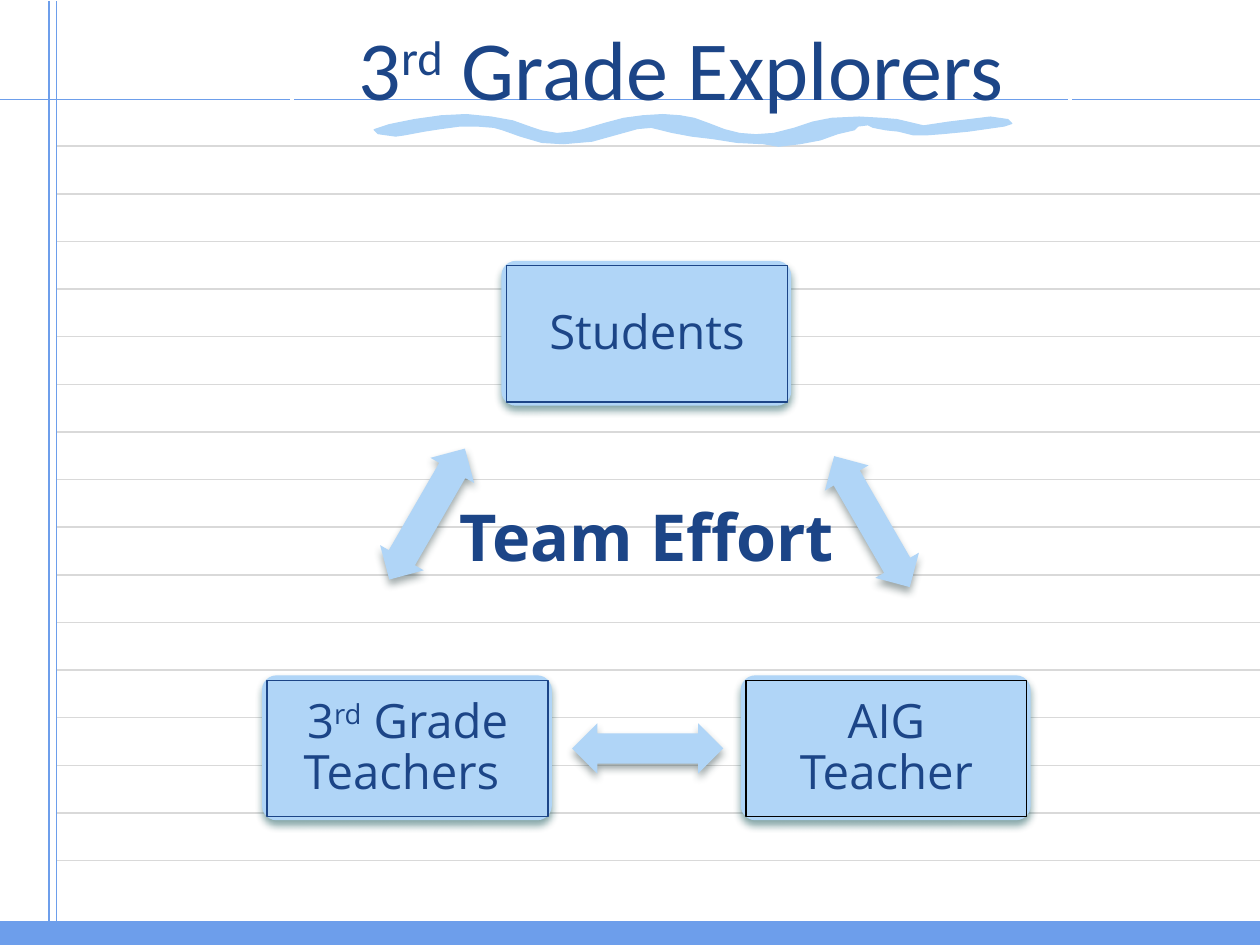
from lxml.etree import SubElement
from pptx import Presentation
from pptx.dml.color import RGBColor
from pptx.enum.shapes import MSO_CONNECTOR, MSO_SHAPE
from pptx.enum.text import MSO_ANCHOR, PP_ALIGN
from pptx.oxml.ns import qn
from pptx.util import Inches, Pt

NAVY, SKY, BLUE = "1C4587", "B0D5F7", "6D9EEB"


def paint(shape, fill=None, line=None, width=0.75, shadow=None):
    if fill:
        shape.fill.solid()
        shape.fill.fore_color.rgb = RGBColor.from_string(fill)
    else:
        shape.fill.background()
    if line:
        shape.line.color.rgb = RGBColor.from_string(line)
        shape.line.width = Pt(width)
    else:
        shape.line.fill.background()
    shape.shadow.inherit = False
    if shadow:
        effects = shape._element.spPr.find(qn("a:effectLst"))
        outer = SubElement(effects, qn("a:outerShdw"), blurRad=str(Pt(4.5)), dist=str(Pt(3)),
                           dir="5400000", algn="ctr", rotWithShape="0")
        color = SubElement(outer, qn("a:srgbClr"), val=shadow)
        SubElement(color, qn("a:alpha"), val="47000")


def write(shape, runs, size, font, anchor, insets, bold=False, spacing=1.0):
    frame = shape.text_frame
    frame.word_wrap = True
    frame.vertical_anchor = anchor
    frame.margin_left, frame.margin_top, frame.margin_right, frame.margin_bottom = map(Inches, insets)
    paragraph = frame.paragraphs[0]
    paragraph.alignment = PP_ALIGN.CENTER
    paragraph.line_spacing = spacing
    for text in runs:
        run = paragraph.add_run()
        run.text = text
        run.font.size = Pt(size)
        run.font.name = font
        run.font.bold = bold
        run.font.color.rgb = RGBColor.from_string(NAVY)
        if text == "rd":
            run.font._element.set("baseline", "30000")


presentation = Presentation()
presentation.slide_width = Inches(10)
presentation.slide_height = Inches(7.5)
slide = presentation.slides.add_slide(presentation.slide_layouts[6])
shapes = slide.shapes

rules = [(0.45, 1.16 + 0.378 * row, 10, 1.16 + 0.378 * row, "D9D9D9", 0.86) for row in range(16)]
rules += [(x, 0.01, x, 7.49, BLUE, 0.75) for x in (0.39, 0.45)]
rules.append((0, 0.79, 10, 0.79, BLUE, 0.75))
for left, top, right, bottom, color, width in rules:
    rule = shapes.add_connector(MSO_CONNECTOR.STRAIGHT, Inches(left), Inches(top),
                                Inches(right), Inches(bottom))
    rule.line.color.rgb = RGBColor.from_string(color)
    rule.line.width = Pt(width)
    SubElement(rule._element.spPr, qn("a:effectLst"))

footer_band = shapes.add_shape(MSO_SHAPE.RECTANGLE, 0, Inches(7.31), Inches(10), Inches(0.19))
paint(footer_band, BLUE)

center_label = shapes.add_textbox(Inches(3.22), Inches(3.73), Inches(3.83), Inches(0.83))
write(center_label, ["Team Effort"], 37, "Open Sans", MSO_ANCHOR.BOTTOM, (0, 0.05, 0, 0), bold=True)

cards = [
    (3.98, 2.07, ["Students"], NAVY),
    (5.88, 5.36, ["AIG Teacher"], "000000"),
    (2.08, 5.36, ["3", "rd", " Grade Teachers "], NAVY),
]
for left, top, runs, border in cards:
    card = shapes.add_shape(MSO_SHAPE.ROUNDED_RECTANGLE, Inches(left), Inches(top),
                            Inches(2.3), Inches(1.15))
    card.adjustments[0] = 0.1
    paint(card, SKY, shadow="004649")
    label = shapes.add_shape(MSO_SHAPE.RECTANGLE, Inches(left + 0.04), Inches(top + 0.04),
                             Inches(2.23), Inches(1.08))
    paint(label, SKY, border)
    write(label, runs, 27, "Open Sans", MSO_ANCHOR.MIDDLE, (0.11,) * 4, spacing=0.9)

for left, top, rotation in [(6.32, 3.94, 60), (4.54, 5.74, 180), (2.79, 3.88, 300)]:
    arrow = shapes.add_shape(MSO_SHAPE.LEFT_RIGHT_ARROW, Inches(left), Inches(top),
                             Inches(1.2), Inches(0.4))
    arrow.adjustments[0] = 0.6
    arrow.adjustments[1] = 0.5
    arrow.rotation = rotation
    paint(arrow, SKY, shadow="374C4D")

title = shapes.add_shape(MSO_SHAPE.RECTANGLE, Inches(2.32), Inches(0.08), Inches(6.17), Inches(0.91))
paint(title, line="FFFFFF", width=2.25)
write(title, ["3", "rd", " Grade Explorers"], 48, "Calibri", MSO_ANCHOR.TOP, (0.1, 0.05, 0.1, 0.05))

brush_top = [
    (297, 103), (309, 99), (329, 95), (350, 92), (370, 91), (390, 93), (407, 96), (421, 101),
    (430, 104), (442, 106), (454, 105), (463, 103), (480, 98), (495, 94), (510, 92), (526, 91),
    (540, 92), (551, 94), (562, 98), (575, 103), (587, 106), (600, 107), (614, 106), (630, 102),
    (645, 97), (660, 94), (682, 93), (700, 94), (712, 95), (733, 100), (753, 97), (786, 93),
    (800, 95), (803, 98),
]
brush_bottom = [
    (797, 100), (769, 104), (748, 106), (735, 107), (725, 107), (713, 104), (703, 103), (693, 101),
    (689, 99), (681, 100), (678, 103), (665, 106), (651, 111), (635, 114), (618, 116), (606, 114),
    (585, 113), (566, 110), (549, 108), (533, 105), (517, 101), (506, 102), (488, 107), (470, 112),
    (447, 114), (430, 113), (413, 108), (399, 103), (392, 101), (379, 100), (365, 100), (350, 102),
    (337, 104), (321, 107), (314, 108), (300, 106),
]
builder = shapes.build_freeform(*brush_top[0], scale=Inches(0.01))
builder.add_line_segments(brush_top[1:] + brush_bottom, close=True)
underline = builder.convert_to_shape()
paint(underline, SKY, SKY)

presentation.save("out.pptx")
